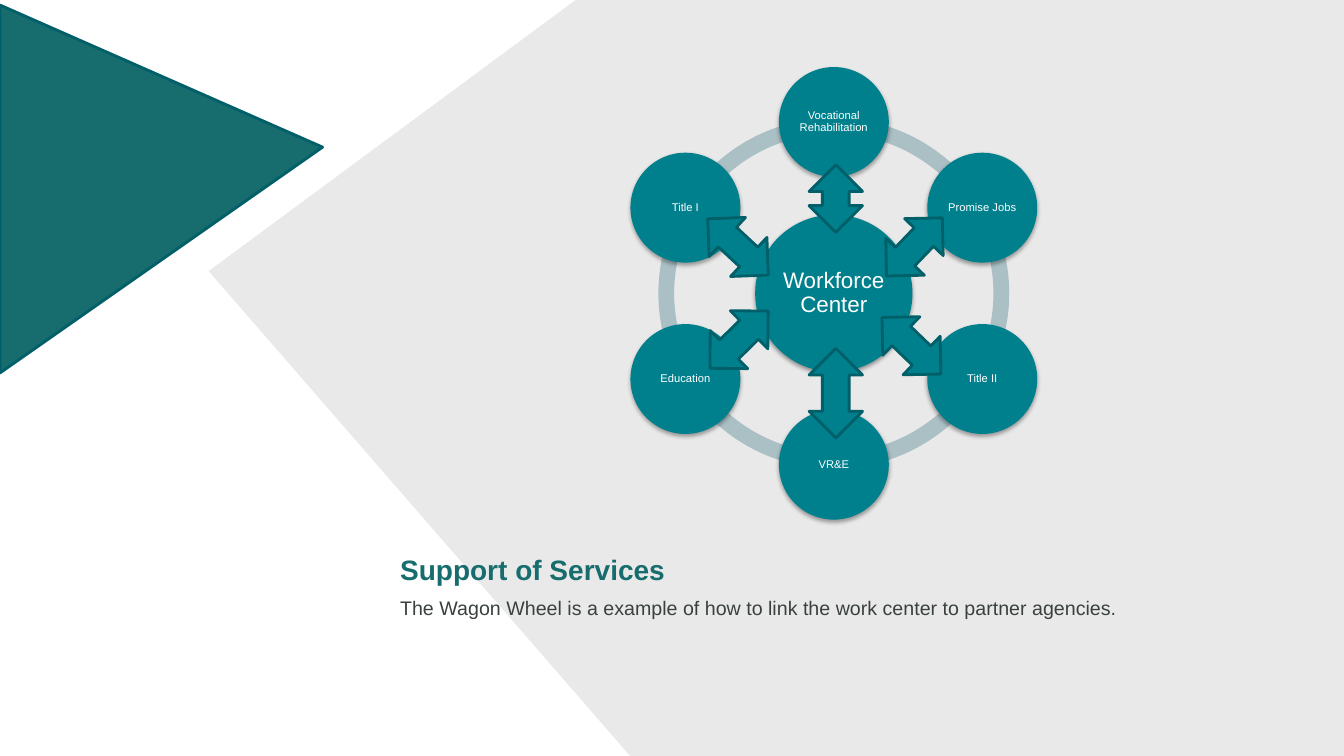
from itertools import pairwise
from math import cos, radians, sin

from lxml import etree
from pptx import Presentation, util as u
from pptx.dml.color import RGBColor
from pptx.enum import shapes, text
from pptx.oxml.ns import qn

COLORS = {
    "teal": "00808D",
    "edge": "005F68",
    "deep": "176C6D",
    "ring": "ABC0C5",
    "gray": "AFABAB",
    "ink": "39413D",
    "white": "FFFFFF",
    "black": "000000",
}
SHAPE = shapes.MSO_SHAPE
ALIGN = text.PP_ALIGN
ANCHOR = text.MSO_ANCHOR


class Deck:
    font = "Arial"

    def __init__(self, wide, high):
        self.show = Presentation()
        self.show.slide_width = u.Inches(wide)
        self.show.slide_height = u.Inches(high)
        self.slide = self.show.slides.add_slide(self.show.slide_layouts[6])

    def color(self, name):
        return RGBColor.from_string(COLORS[name])

    def paint(self, shape, fill, line=None):
        shape.shadow.inherit = False
        shape.fill.solid()
        shape.fill.fore_color.rgb = self.color(fill)
        if line:
            shape.line.color.rgb = self.color(line)
            shape.line.width = u.Pt(2)
        else:
            shape.line.fill.background()
        return shape

    def panel(self, points, fill, line=None, alpha=None):
        first, *rest = [(u.Inches(x), u.Inches(y)) for x, y in points]
        form = self.slide.shapes.build_freeform(*first)
        form.add_line_segments(rest, close=True)
        shape = self.paint(form.convert_to_shape(), fill, line)
        if alpha:
            tint = next(shape.element.spPr.iter(qn("a:srgbClr")))
            etree.SubElement(tint, qn("a:alpha"), val=str(alpha * 1000))

    def shape(self, kind, mid, wide, high, fill, line=None):
        x, y = mid
        shape = self.slide.shapes.add_shape(
            kind, u.Inches(x - wide / 2), u.Inches(y - high / 2),
            u.Inches(wide), u.Inches(high))
        return self.paint(shape, fill, line)

    def arc(self, mid, size, start, end):
        shape = self.shape(SHAPE.BLOCK_ARC, mid, size, size, "ring")
        for i, value in enumerate((start * 0.6, end * 0.6, 0.045)):
            shape.adjustments[i] = value

    def arrow(self, mid, high, turn):
        shape = self.shape(SHAPE.UP_DOWN_ARROW, mid, 0.53, high, "teal", "edge")
        shape.rotation = turn

    def disc(self, mid, size, words, points, pad, drop, alpha):
        shape = self.shape(SHAPE.OVAL, mid, size, size, "teal")
        effects = shape.element.spPr.find(qn("a:effectLst"))
        shade = etree.SubElement(
            effects, qn("a:outerShdw"), blurRad=str(u.Pt(3.1)),
            dist=str(u.Pt(drop)), dir="5400000", rotWithShape="0")
        tint = etree.SubElement(shade, qn("a:srgbClr"), val=COLORS["black"])
        etree.SubElement(tint, qn("a:alpha"), val=str(alpha * 1000))
        frame = shape.text_frame
        frame.margin_left = frame.margin_right = u.Inches(pad)
        frame.margin_top = frame.margin_bottom = u.Inches(pad)
        para = self.letter(frame, words, points, "white", ANCHOR.MIDDLE)
        para.alignment = ALIGN.CENTER
        para.line_spacing = 0.9

    def label(self, box, words, points, color, anchor, bold=False):
        frame = self.slide.shapes.add_textbox(*map(u.Inches, box)).text_frame
        return self.letter(frame, words, points, color, anchor, bold)

    def letter(self, frame, words, points, color, anchor, bold=False):
        frame.word_wrap = True
        frame.vertical_anchor = anchor
        para = frame.paragraphs[0]
        para.text = words
        font = para.runs[0].font
        font.name = self.font
        font.size = u.Pt(points)
        font.bold = bold
        font.color.rgb = self.color(color)
        return para


def main():
    deck = Deck(13.33, 7.5)
    deck.panel([(5.71, 0), (13.33, 0), (13.33, 7.5), (6.25, 7.5), (2.07, 2.69)],
               "gray", alpha=25)
    deck.panel([(0, 0.05), (3.2, 1.46), (0, 3.7)], "deep", "edge")
    deck.label((3.87, 5.24, 8.8, 0.62), "Support of Services", 20, "deep",
               ANCHOR.BOTTOM, True)

    hub = (8.27, 2.91)
    for start, end in pairwise([*range(18, 199, 36), 18]):
        deck.arc(hub, 3.48, start, end)
    deck.disc(hub, 1.56, "Workforce Center", 16, 0.02, 1.6, 38)

    names = ["Vocational Rehabilitation", "Promise Jobs", "Title II",
             "VR&E", "Education", "Title I"]
    reach = 1.7
    for i, name in enumerate(names):
        turn = radians(i * 360 / len(names))
        mid = (hub[0] + reach * sin(turn), hub[1] - reach * cos(turn))
        deck.disc(mid, 1.09, name, 8, 0.01, 1.8, 35)

    body = deck.label(
        (3.87, 5.86, 8.8, 0.88),
        "The Wagon Wheel is a example of how to link the work center to partner agencies.",
        14, "ink", ANCHOR.TOP)
    body.space_before = u.Pt(2.8)

    spokes = [
        ((8.29, 1.97), 0.67, 0),
        ((7.32, 2.45), 0.82, 312.9),
        ((9.07, 2.45), 0.8, 43.8),
        ((7.33, 3.37), 0.81, 45.5),
        ((9.04, 3.43), 0.81, 313.9),
        ((8.29, 3.9), 0.89, 0),
    ]
    for spoke in spokes:
        deck.arrow(*spoke)

    deck.show.save("out.pptx")


if __name__ == "__main__":
    main()
